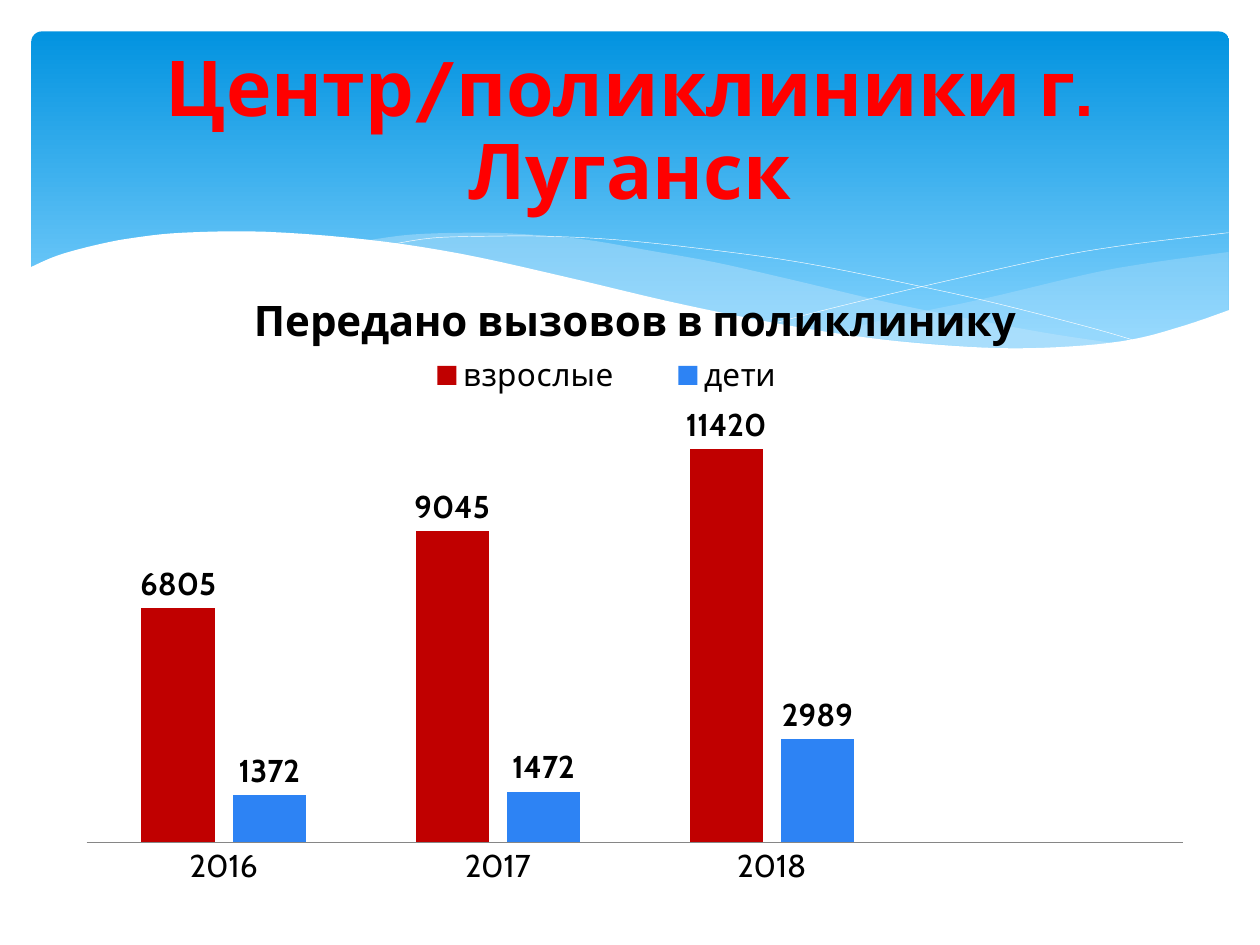
from lxml import etree
from pptx import Presentation
from pptx.chart.data import CategoryChartData
from pptx.dml.color import RGBColor
from pptx.enum import chart as ch, shapes, text
from pptx.oxml.ns import qn
from pptx.util import Pt

THEME = dict(font="Cabin", top="0293E0", low="83D3FE", wave="C6E7FC", white="FFFFFF",
             title="FF0000", ink="000000", axis="868686", head=44, sub=24, body=18)

TITLE = "Центр/поликлиники г. Луганск"
SUB = "Передано вызовов в поликлинику"
YEARS = ["2016", "2017", "2018", ""]
SERIES = [("взрослые", "C00000", [6805, 9045, 11420, None]),
          ("дети", "2D83F4", [1372, 1472, 2989, None])]

# Each wave: fill opacity in percent (None for a line), then smooth edges of knots
WAVES = [
    (29, [[(702, 144), (652, 151), (620, 157), (561, 171), (508, 182), (476, 191)],
          [(476, 191), (518, 195), (554, 198), (586, 200), (622, 199), (652, 194),
           (678, 187), (702, 178)]]),
    (40, [[(643, 197), (602, 191), (558, 183), (508, 173), (453, 160), (409, 150),
           (370, 143), (335, 137), (302, 134), (274, 133), (236, 134), (206, 138)],
          [(206, 138), (246, 143), (291, 152), (353, 167), (420, 181), (468, 190),
           (520, 196), (565, 200), (610, 199), (643, 197)]]),
    (None, [[(222, 140), (247, 136), (279, 135), (312, 135), (352, 137), (400, 142),
             (458, 150), (523, 163), (572, 174), (626, 188), (653, 196)]]),
    (None, [[(441, 185), (484, 174), (539, 161), (602, 147), (644, 140), (685, 135),
             (702, 133)]]),
    (100, [[(703, 177), (677, 186), (647, 194), (612, 198), (571, 199), (523, 196),
            (481, 191), (434, 183), (381, 172), (322, 158), (263, 145), (210, 137),
            (152, 132.5), (105, 133), (76, 136), (55, 140), (33, 146), (17, 153)],
           [(17, 237), (703, 237)]]),
]


def color(code):
    return RGBColor.from_string(code)


def setall(obj, **vals):
    for key, val in vals.items():
        setattr(obj, key, val)


def style(font, size, ink="ink", bold=False):
    setall(font, name=THEME["font"], size=Pt(size), bold=bold)
    font.color.rgb = color(THEME[ink])


def smooth(knots, steps=5):
    """Points of a Catmull-Rom curve through the knots."""
    if len(knots) < 3:
        return knots
    ext = [knots[0], *knots, knots[-1]]
    pts = [knots[0]]
    for a, b, c, d in zip(ext, ext[1:], ext[2:], ext[3:]):
        for t in (n / steps for n in range(1, steps + 1)):
            pts.append(tuple((2 * q + (r - p) * t + (2 * p - 5 * q + 4 * r - s) * t ** 2
                              + (3 * q - p - 3 * r + s) * t ** 3) / 2
                             for p, q, r, s in zip(a, b, c, d)))
    return pts


def wave(slide, alpha, edges):
    pts = [(Pt(x), Pt(y)) for edge in edges for x, y in smooth(edge)]
    form = slide.shapes.build_freeform(*pts[0], scale=1.0)
    form.add_line_segments(pts[1:], close=alpha is not None)
    shape = form.convert_to_shape()
    shape.shadow.inherit = False
    if alpha is None:
        shape.fill.background()
        shape.line.color.rgb = color(THEME["white"])
        shape.line.width = Pt(0.25)
        return
    shape.line.fill.background()
    shape.fill.solid()
    shape.fill.fore_color.rgb = color(THEME["white" if alpha == 100 else "wave"])
    if alpha < 100:
        clr = shape.fill._xPr.find(".//" + qn("a:srgbClr"))
        etree.SubElement(clr, qn("a:alpha")).set("val", str(alpha * 1000))


def banner(slide):
    box = slide.shapes.add_shape(shapes.MSO_SHAPE.ROUNDED_RECTANGLE,
                                 Pt(18), Pt(18), Pt(684.5), Pt(194.5))
    box.adjustments[0] = 0.03
    box.shadow.inherit = False
    box.line.fill.background()
    box.fill.gradient()
    box.fill.gradient_angle = 270
    for stop, pos, key in zip(box.fill.gradient_stops, (0, 0.9), ("top", "low")):
        stop.color.rgb = color(THEME[key])
        stop.position = pos
    for alpha, edges in WAVES:
        wave(slide, alpha, edges)


def heading(slide):
    box = slide.shapes.add_textbox(Pt(36), Pt(26.5), Pt(648), Pt(99))
    setall(box.text_frame, word_wrap=True, vertical_anchor=text.MSO_ANCHOR.MIDDLE)
    par = box.text_frame.paragraphs[0]
    setall(par, text=TITLE, alignment=text.PP_ALIGN.CENTER, line_spacing=0.9)
    style(par.runs[0].font, THEME["head"], "title", True)


def place(part, inner=False, **spots):
    """Give a chart part a fixed place, in fractions of the chart."""
    old = part.find(qn("c:layout"))
    if old is not None:
        part.remove(old)
    lay = etree.Element(qn("c:layout"))
    man = etree.SubElement(lay, qn("c:manualLayout"))
    vals = {"layoutTarget": "inner"} if inner else {}
    vals |= {"xMode": "edge", "yMode": "edge"} | spots
    for key, val in vals.items():
        etree.SubElement(man, qn("c:" + key)).set("val", str(val))
    pos = part.find(qn("c:legendPos"))
    part.insert(0 if pos is None else 1, lay)


def graph(slide):
    data = CategoryChartData()
    data.categories = YEARS
    for name, _, vals in SERIES:
        data.add_series(name, vals)
    chart = slide.shapes.add_chart(ch.XL_CHART_TYPE.COLUMN_CLUSTERED, Pt(36.5), Pt(151),
                                   Pt(652.5), Pt(363), data).chart
    style(chart.font, THEME["body"])
    chart.has_title = True
    frame = chart.chart_title.text_frame
    frame.text = SUB
    style(frame.paragraphs[0].runs[0].font, THEME["sub"], bold=True)
    chart.chart_title.include_in_layout = False

    chart.has_legend = True
    setall(chart.legend, position=ch.XL_LEGEND_POSITION.TOP, include_in_layout=False)
    style(chart.legend.font, THEME["body"])

    cat, val = chart.category_axis, chart.value_axis
    setall(cat, major_tick_mark=ch.XL_TICK_MARK.NONE, has_major_gridlines=False)
    cat.format.line.color.rgb = color(THEME["axis"])
    setall(val, visible=False, has_major_gridlines=False,
           minimum_scale=0, maximum_scale=12000)

    plot = chart.plots[0]
    setall(plot, gap_width=150, overlap=-25, vary_by_categories=False)
    for ser, (_, code, _) in zip(plot.series, SERIES):
        ser.format.fill.solid()
        ser.format.fill.fore_color.rgb = color(code)
        setall(ser.data_labels, show_value=True,
               position=ch.XL_LABEL_POSITION.OUTSIDE_END)
        style(ser.data_labels.font, THEME["body"], bold=True)

    place(chart._chartSpace.find(".//" + qn("c:plotArea")), True,
          x=0.02, y=0.26, w=0.96, h=0.65)
    place(chart.legend._element, x=0.28, y=0.14, w=0.39, h=0.07)


def main():
    prs = Presentation()
    setall(prs, slide_width=Pt(720), slide_height=Pt(540))
    slide = prs.slides.add_slide(prs.slide_layouts[6])
    banner(slide)
    heading(slide)
    graph(slide)
    prs.save("out.pptx")


if __name__ == "__main__":
    main()
